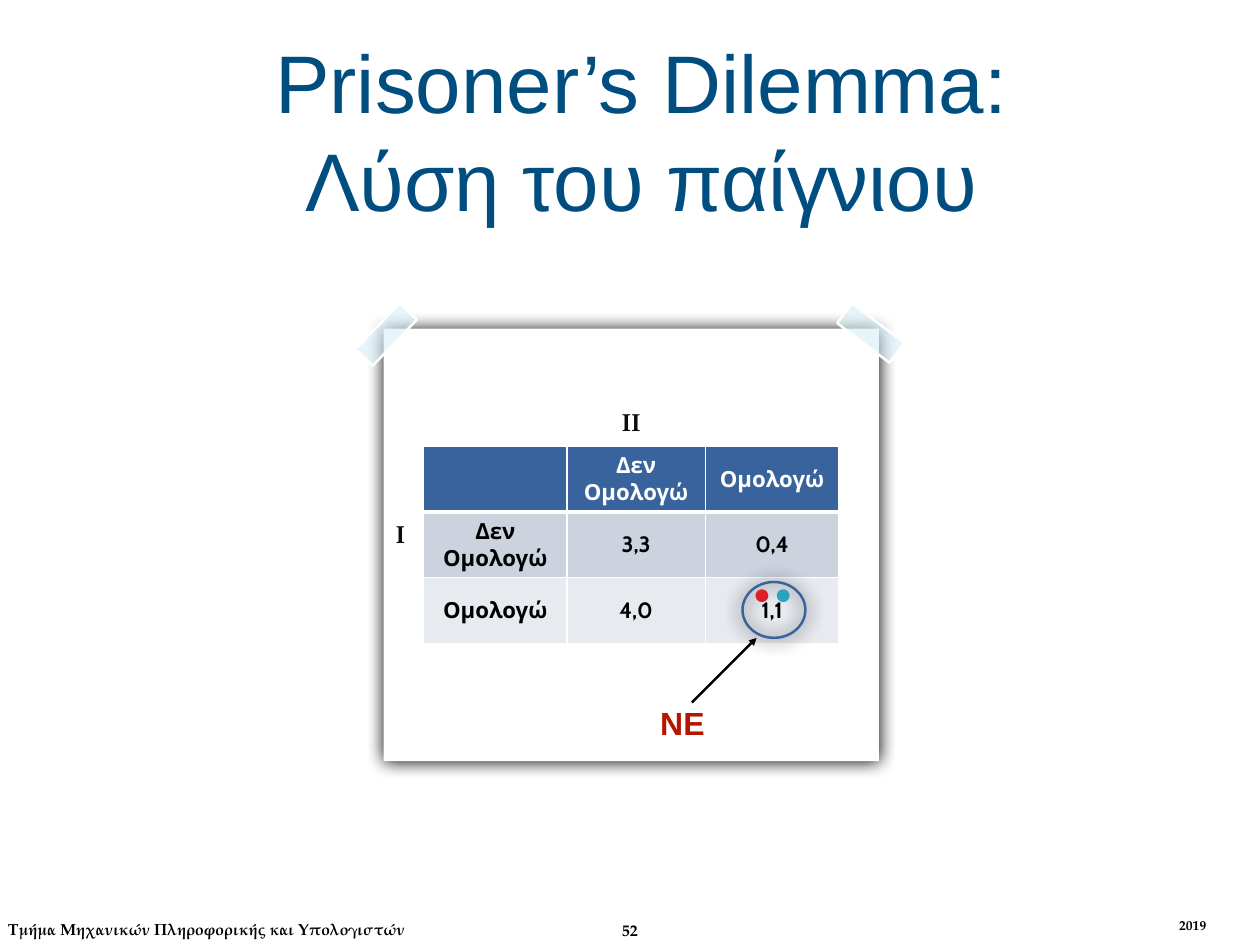
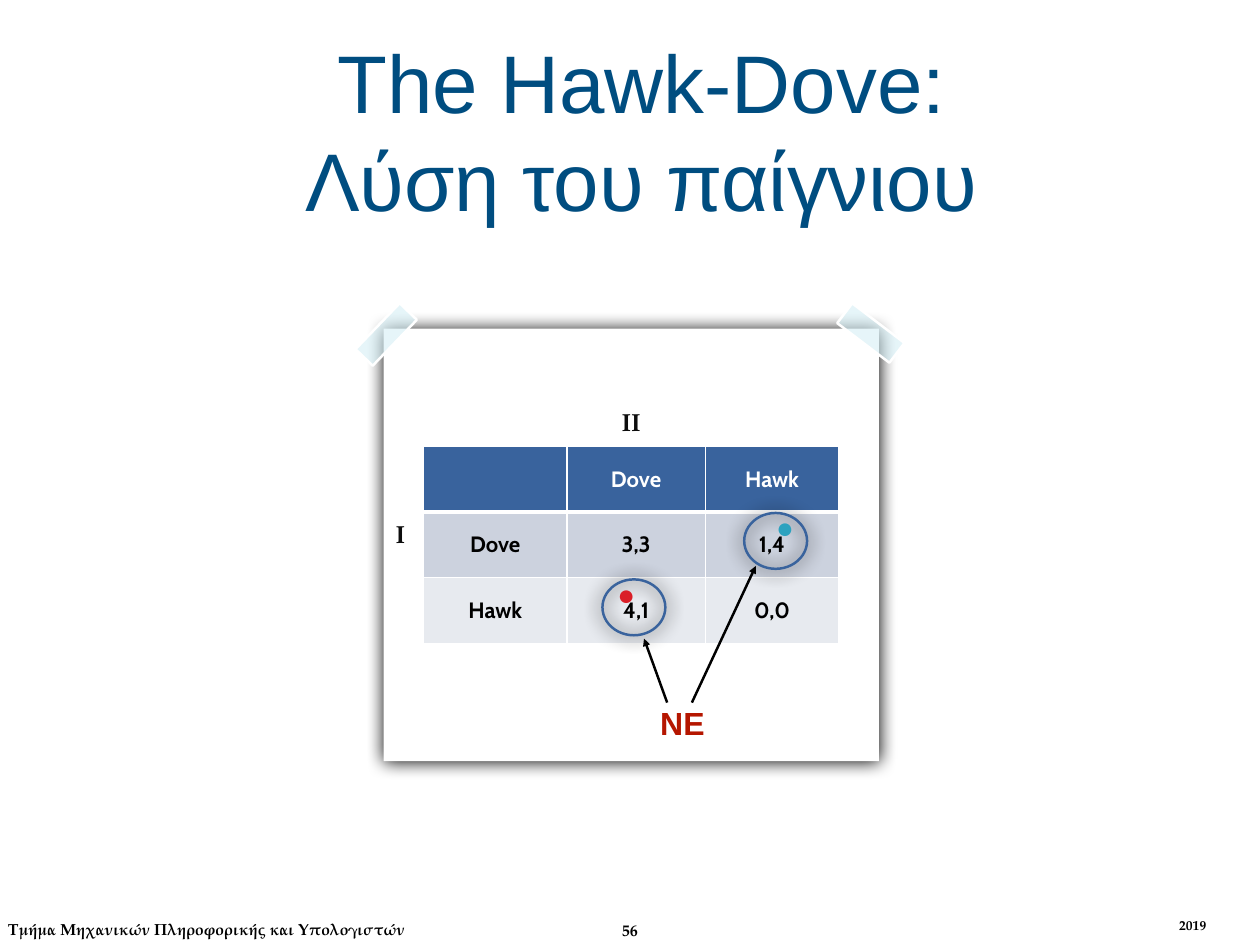
from dataclasses import dataclass

from lxml.etree import SubElement
from pptx import Presentation
from pptx.dml.color import RGBColor
from pptx.enum.shapes import MSO_CONNECTOR as Connector, MSO_SHAPE as Shape
from pptx.enum.text import MSO_ANCHOR as Anchor, MSO_AUTO_SIZE as AutoSize, PP_ALIGN as Align
from pptx.oxml.ns import qn
from pptx.util import Pt


@dataclass(frozen=True)
class Theme:
    serif: str = "TeX Gyre Pagella"
    sans: str = "Arial"
    table_font: str = "Cabin"
    title: str = "004D80"
    ink: str = "000000"
    white: str = "FFFFFF"
    header: str = "39639D"
    bands: tuple = ("CCD2DE", "E7EAEF")
    tape: str = "D3EEF5"
    player: str = "0D0D0D"
    player_outline: str = "808080"
    red: str = "DA1F28"
    blue: str = "2DA2BF"
    equilibrium: str = "B51600"
    title_size: float = 66.4
    equilibrium_size: float = 26
    dot_size: float = 24
    player_size: float = 20
    table_size: float = 18
    footer_size: float = 13
    year_size: float = 11


@dataclass(frozen=True)
class Game:
    name: str
    page: str
    strategies: tuple
    payoffs: tuple
    circles: tuple
    dots: tuple
    arrows: tuple


THEME = Theme()
DEPARTMENT = "Τμήμα Μηχανικών Πληροφορικής και Υπολογιστών"
YEAR = "2019"
SOLUTION = "Λύση του παίγνιου"

GAMES = (
    Game(
        "Prisoner’s Dilemma:", "52", ("Δεν Ομολογώ", "Ομολογώ"),
        (("3,3", "0,4"), ("4,0", "1,1")),
        circles=((603.4, 473),),
        dots=((625.7, 463.7, THEME.blue), (608.4, 463.7, THEME.red)),
        arrows=((562.3, 571, 614.9, 518.4),),
    ),
    Game(
        "The Hawk-Dove:", "56", ("Dove", "Hawk"),
        (("3,3", "1,4"), ("4,1", "0,0")),
        circles=((604.8, 416.9), (489.6, 470.9)),
        dots=((627.1, 410.4, THEME.blue), (498.2, 464.4, THEME.red)),
        arrows=((562.3, 571, 614.2, 460), (542.2, 571, 523.4, 519)),
    ),
)


def rgb(color):
    return RGBColor.from_string(color)


def add_solid(parent, color):
    SubElement(SubElement(parent, qn("a:solidFill")), qn("a:srgbClr"), val=color)


def set_insets(target, inset):
    target.margin_left = target.margin_right = Pt(inset)
    target.margin_top = target.margin_bottom = Pt(inset)


def write_line(paragraph, text, font, size, color, bold=True, align=Align.CENTER):
    paragraph.alignment = align
    run = paragraph.add_run()
    run.text = text
    run.font.name, run.font.size, run.font.bold = font, Pt(size), bold
    run.font.color.rgb = rgb(color)
    return run


def add_text(slide, box, lines, font, size, color, bold=True, align=Align.CENTER,
             anchor=Anchor.TOP, inset=3.6, wrap=True, grow=False):
    frame = slide.shapes.add_textbox(*map(Pt, box)).text_frame
    frame.word_wrap = wrap
    frame.auto_size = AutoSize.SHAPE_TO_FIT_TEXT if grow else AutoSize.NONE
    frame.vertical_anchor = anchor
    set_insets(frame, inset)
    for index, line in enumerate(lines):
        paragraph = frame.add_paragraph() if index else frame.paragraphs[0]
        write_line(paragraph, line, font, size, color, bold, align)
    return frame


def add_player(slide, box, label, anchor=Anchor.TOP, spacing=None):
    frame = add_text(slide, box, [label], THEME.serif, THEME.player_size, THEME.player,
                     anchor=anchor)
    paragraph = frame.paragraphs[0]
    if spacing:
        paragraph.line_spacing = Pt(spacing)
    properties = paragraph.runs[0].font
    properties.fill.solid()
    properties.color.rgb = rgb(THEME.player)
    outline = SubElement(paragraph.runs[0]._r.get_or_add_rPr(), qn("a:ln"), w=str(Pt(0.75)))
    add_solid(outline, THEME.player_outline)
    outline.getparent().insert(0, outline)


def add_figure(slide, kind, box, fill=None, line=None, rotation=0, opacity=None, shadow=False):
    figure = slide.shapes.add_shape(kind, *map(Pt, box))
    figure.rotation = rotation
    figure.shadow.inherit = False
    if fill:
        figure.fill.solid()
        figure.fill.fore_color.rgb = rgb(fill)
    else:
        figure.fill.background()
    if line:
        figure.line.color.rgb = rgb(line)
        figure.line.width = Pt(2)
    else:
        figure.line.fill.background()
    properties = figure.element.spPr
    if opacity:
        color = properties.find(qn("a:solidFill")).find(qn("a:srgbClr"))
        SubElement(color, qn("a:alpha"), val=str(opacity * 1000))
    if shadow:
        outer = SubElement(properties.find(qn("a:effectLst")), qn("a:outerShdw"),
                           blurRad=str(Pt(15)), dist=str(Pt(0.7)), dir="5400000", rotWithShape="0")
        SubElement(outer, qn("a:srgbClr"), val=THEME.ink)


def add_arrow(slide, ends):
    arrow = slide.shapes.add_connector(Connector.STRAIGHT, *map(Pt, ends))
    arrow.line.color.rgb = rgb(THEME.ink)
    arrow.line.width = Pt(2)
    properties = arrow.element.spPr
    SubElement(properties.find(qn("a:ln")), qn("a:tailEnd"), type="triangle")
    SubElement(properties, qn("a:effectLst"))


def add_grid(slide, left, top, widths, heights):
    table = slide.shapes.add_table(len(heights), len(widths), Pt(left), Pt(top),
                                   Pt(sum(widths)), Pt(sum(heights))).table
    table.first_row = table.horz_banding = False
    for column, width in zip(table.columns, widths):
        column.width = Pt(width)
    for row, height in zip(table.rows, heights):
        row.height = Pt(height)
    return table


def set_borders(cell, top=1, bottom=1):
    properties = cell._tc.get_or_add_tcPr()
    for side, width in (("L", 1), ("R", 1), ("T", top), ("B", bottom)):
        add_solid(SubElement(properties, qn(f"a:ln{side}"), w=str(Pt(width))), THEME.white)


def add_payoff_table(slide, game):
    rows = [("", *game.strategies)]
    rows += [(name, *values) for name, values in zip(game.strategies, game.payoffs)]
    table = add_grid(slide, 344.2, 362.9, (116.6, 112.3, 108.7), [53.3] * len(rows))
    edges = ((1, 3), (3, 1), (1, 1))
    for r, (texts, fill, (top, bottom)) in enumerate(zip(rows, (THEME.header, *THEME.bands), edges)):
        for c, text in enumerate(texts):
            cell = table.cell(r, c)
            set_borders(cell, top, bottom)
            cell.fill.solid()
            cell.fill.fore_color.rgb = rgb(fill)
            cell.vertical_anchor = Anchor.MIDDLE
            set_insets(cell, 3.6)
            if text:
                write_line(cell.text_frame.paragraphs[0], text, THEME.table_font,
                           THEME.table_size, THEME.ink if r else THEME.white)


def add_footer(slide, page):
    add_text(slide, (1.4, 743.8, 331.2, 23), [DEPARTMENT], THEME.serif, THEME.footer_size,
             THEME.ink, align=Align.RIGHT, grow=True)
    year = add_grid(slide, 953.3, 743, [41], [23.8]).cell(0, 0)
    year.fill.background()
    set_insets(year, 5)
    write_line(year.text_frame.paragraphs[0], YEAR, THEME.serif, THEME.year_size, THEME.ink,
               align=Align.LEFT)
    add_text(slide, (500.4, 743.8, 22.3, 23.8), [page], THEME.serif, THEME.footer_size,
             THEME.ink, align=Align.RIGHT, inset=4.3, wrap=False, grow=True)


def add_game(deck, game):
    slide = deck.slides.add_slide(deck.slide_layouts[6])
    add_footer(slide, game.page)
    add_figure(slide, Shape.RECTANGLE, (311.8, 267.1, 402.5, 351.4), THEME.white, shadow=True)
    add_payoff_table(slide, game)
    add_player(slide, (308.9, 263.5, 33.1, 347.8), "I", Anchor.MIDDLE, spacing=16)
    for box, rotation in (((681.1, 260.6, 53.3, 20.2), 37.2), ((288, 262.1, 51.8, 19.4), 313.9)):
        add_figure(slide, Shape.RECTANGLE, box, THEME.tape, THEME.white, rotation, opacity=56)
    add_player(slide, (339.1, 326.9, 347.8, 33.1), "II")
    for corner in game.circles:
        add_figure(slide, Shape.OVAL, (*corner, 51.1, 45.4), line=THEME.header, shadow=True)
    add_text(slide, (84.2, 20.2, 874.1, 169.9), [game.name, SOLUTION], THEME.sans,
             THEME.title_size, THEME.title, bold=False, anchor=Anchor.MIDDLE, inset=4.3)
    for left, top, color in game.dots:
        add_text(slide, (left, top, 11.5, 35.3), ["●"], THEME.sans, THEME.dot_size, color,
                 bold=False, align=Align.LEFT, grow=True)
    add_text(slide, (523.4, 571.7, 62.6, 31), ["NE"], THEME.sans, THEME.equilibrium_size,
             THEME.equilibrium, anchor=Anchor.MIDDLE, inset=0, grow=True)
    for ends in game.arrows:
        add_arrow(slide, ends)


def main():
    deck = Presentation()
    deck.slide_width, deck.slide_height = Pt(1024), Pt(768)
    for game in GAMES:
        add_game(deck, game)
    deck.save("out.pptx")


if __name__ == "__main__":
    main()
